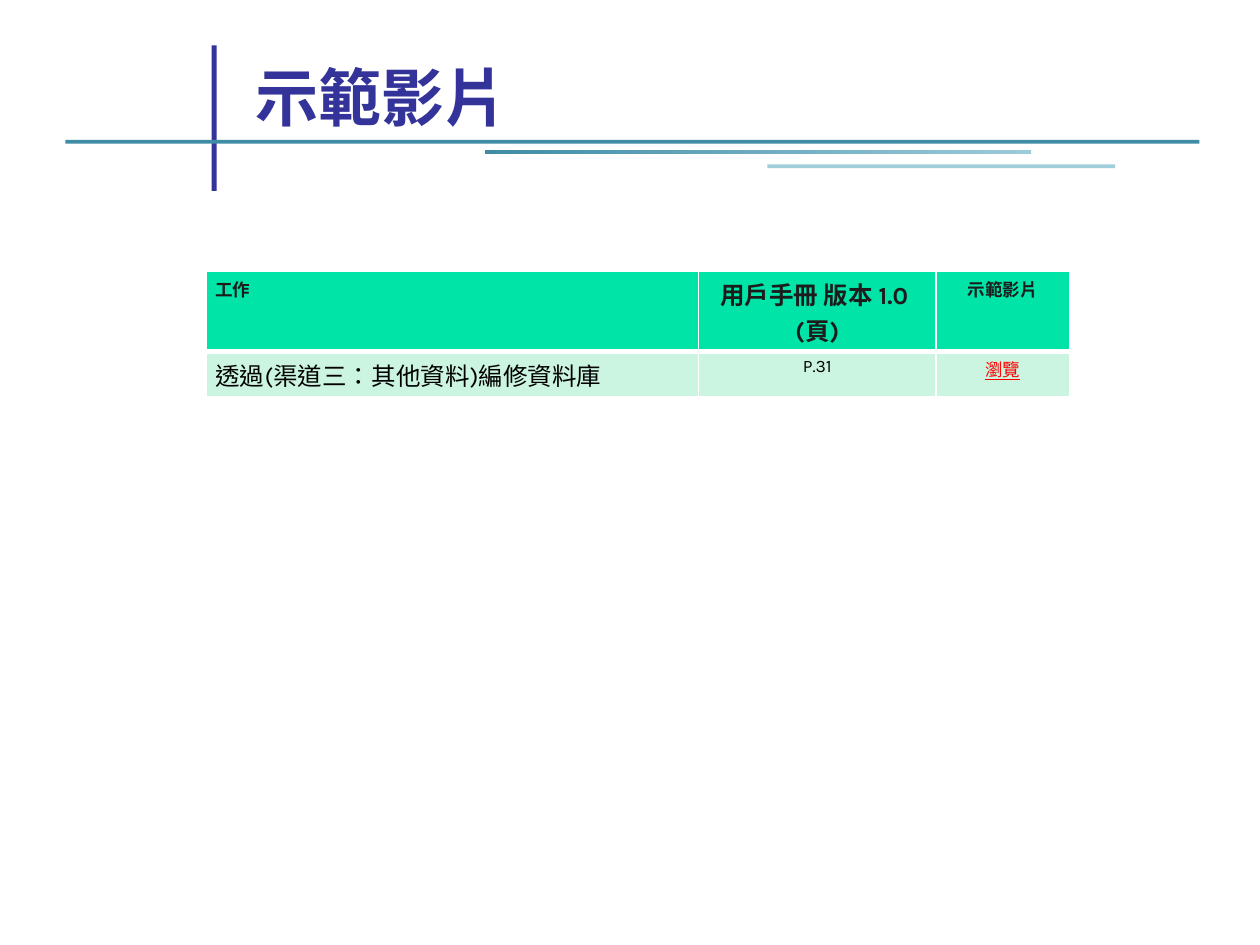
from dataclasses import dataclass

from lxml import etree
from pptx import Presentation
from pptx.dml.color import RGBColor
from pptx.enum.lang import MSO_LANGUAGE_ID
from pptx.enum.shapes import MSO_SHAPE
from pptx.enum.text import MSO_ANCHOR, PP_ALIGN
from pptx.oxml.ns import qn
from pptx.util import Inches, Pt

RECTANGLE = MSO_SHAPE.RECTANGLE
BOTTOM = MSO_ANCHOR.BOTTOM
LEFT, CENTER = PP_ALIGN.LEFT, PP_ALIGN.CENTER
LANGUAGE = MSO_LANGUAGE_ID.TRADITIONAL_CHINESE
BLANK_LAYOUT = 6


@dataclass(frozen=True)
class Theme:
    font: str = "Karla"
    link_font: str = "Arial"
    navy: str = "333399"
    teal: str = "3F8DA5"
    pale_teal: str = "9BCAD9"
    light_teal: str = "A1CDDB"
    header_fill: str = "00E4A8"
    body_fill: str = "CCF5E1"
    header_text: str = "1C1C1C"
    body_text: str = "000000"
    link: str = "FF0000"
    border: str = "FFFFFF"
    title_size: int = 36
    large_size: int = 14
    small_size: int = 10
    thin_border: int = 1
    thick_border: int = 3


THEME = Theme()


def color(value):
    return RGBColor.from_string(value)


def part(box, left, top, width, height):
    x, y, w, h = box
    return (round(x + w * left), round(y + h * top),
            round(w * width), round(h * height))


def style_text(paragraph, size, text_color, bold=False, font=THEME.font,
               underline=False, align=LEFT):
    paragraph.alignment = align
    for run in paragraph.runs:
        run.font.language_id = LANGUAGE
        run.font.name = font
        run.font.size = Pt(size)
        run.font.color.rgb = color(text_color)
        run.font.bold = bold
        run.font.underline = underline


def add_bar(slide, box, start, end=None):
    shape = slide.shapes.add_shape(RECTANGLE, *box)
    shape.shadow.inherit = False
    shape.line.fill.background()
    if end is None:
        shape.fill.solid()
        shape.fill.fore_color.rgb = color(start)
        return
    shape.fill.gradient()
    shape.fill.gradient_angle = 0
    for stop, value, position in zip(shape.fill.gradient_stops, (start, end), (0, 1)):
        stop.color.rgb = color(value)
        stop.position = position


def add_heading(slide, box, title):
    add_bar(slide, part(box, 0.168, 0.24, 0.004, 0.77), THEME.navy)
    add_bar(slide, part(box, 0.052, 0.74, 0.9, 0.02), THEME.teal)
    add_bar(slide, part(box, 0.385, 0.795, 0.433, 0.02), THEME.teal, THEME.pale_teal)
    add_bar(slide, part(box, 0.609, 0.87, 0.276, 0.02), THEME.light_teal)
    shape = slide.shapes.add_textbox(*part(box, 0.193, 0.19, 0.783, 0.55))
    text_frame = shape.text_frame
    text_frame.word_wrap = True
    text_frame.vertical_anchor = BOTTOM
    text_frame.text = title
    style_text(text_frame.paragraphs[0], THEME.title_size, THEME.navy, bold=True)


def set_borders(cell, **widths):
    properties = cell._tc.get_or_add_tcPr()
    for index, side in enumerate(("left", "right", "top", "bottom")):
        line = etree.Element(qn(f"a:ln{side[0].upper()}"),
                             w=str(Pt(widths.get(side, THEME.thin_border))))
        fill = etree.SubElement(line, qn("a:solidFill"))
        etree.SubElement(fill, qn("a:srgbClr"), val=THEME.border)
        properties.insert(index, line)


def fill_cell(cell, text, fill, text_style):
    cell.margin_left = cell.margin_right = Inches(0.07)
    cell.margin_top = cell.margin_bottom = Inches(0.04)
    cell.fill.solid()
    cell.fill.fore_color.rgb = color(fill)
    cell.text_frame.text = text
    for paragraph in cell.text_frame.paragraphs:
        style_text(paragraph, **text_style)


def add_video_table(slide, box, rows):
    column_shares = (0.57, 0.275, 0.155)
    row_shares = (0.64, 0.36)
    table = slide.shapes.add_table(len(rows), len(column_shares), *box).table
    for column, share in zip(table.columns, column_shares):
        column.width = round(box[2] * share)
    for row, share in zip(table.rows, row_shares):
        row.height = round(box[3] * share)

    large, small = THEME.large_size, THEME.small_size
    header = dict(text_color=THEME.header_text, bold=True)
    body = dict(text_color=THEME.body_text)
    link = dict(text_color=THEME.link, font=THEME.link_font, underline=True)
    styles = (
        (dict(header, size=small), dict(header, size=large), dict(header, size=small)),
        (dict(body, size=large), dict(body, size=small), dict(link, size=small)),
    )
    fills = (THEME.header_fill, THEME.body_fill)
    divider_sides = ("bottom", "top")
    for row_index, texts in enumerate(rows):
        for column_index, text in enumerate(texts):
            cell = table.cell(row_index, column_index)
            align = CENTER if column_index else LEFT
            style = dict(styles[row_index][column_index], align=align)
            fill_cell(cell, text, fills[row_index], style)
            set_borders(cell, **{divider_sides[row_index]: THEME.thick_border})


def main():
    presentation = Presentation()
    presentation.slide_width = Inches(10)
    presentation.slide_height = Inches(7.5)
    slide = presentation.slides.add_slide(presentation.slide_layouts[BLANK_LAYOUT])
    page = (0, 0, presentation.slide_width, presentation.slide_height)

    add_heading(slide, part(page, 0, 0, 1, 0.2), "示範影片")
    add_video_table(slide, part(page, 0.164, 0.287, 0.685, 0.133), (
        ("工作", "用戶手冊 版本 1.0 \n(頁)", "示範影片"),
        ("透過(渠道三：其他資料)編修資料庫", "P.31", "瀏覽"),
    ))
    presentation.save("out.pptx")


if __name__ == "__main__":
    main()
